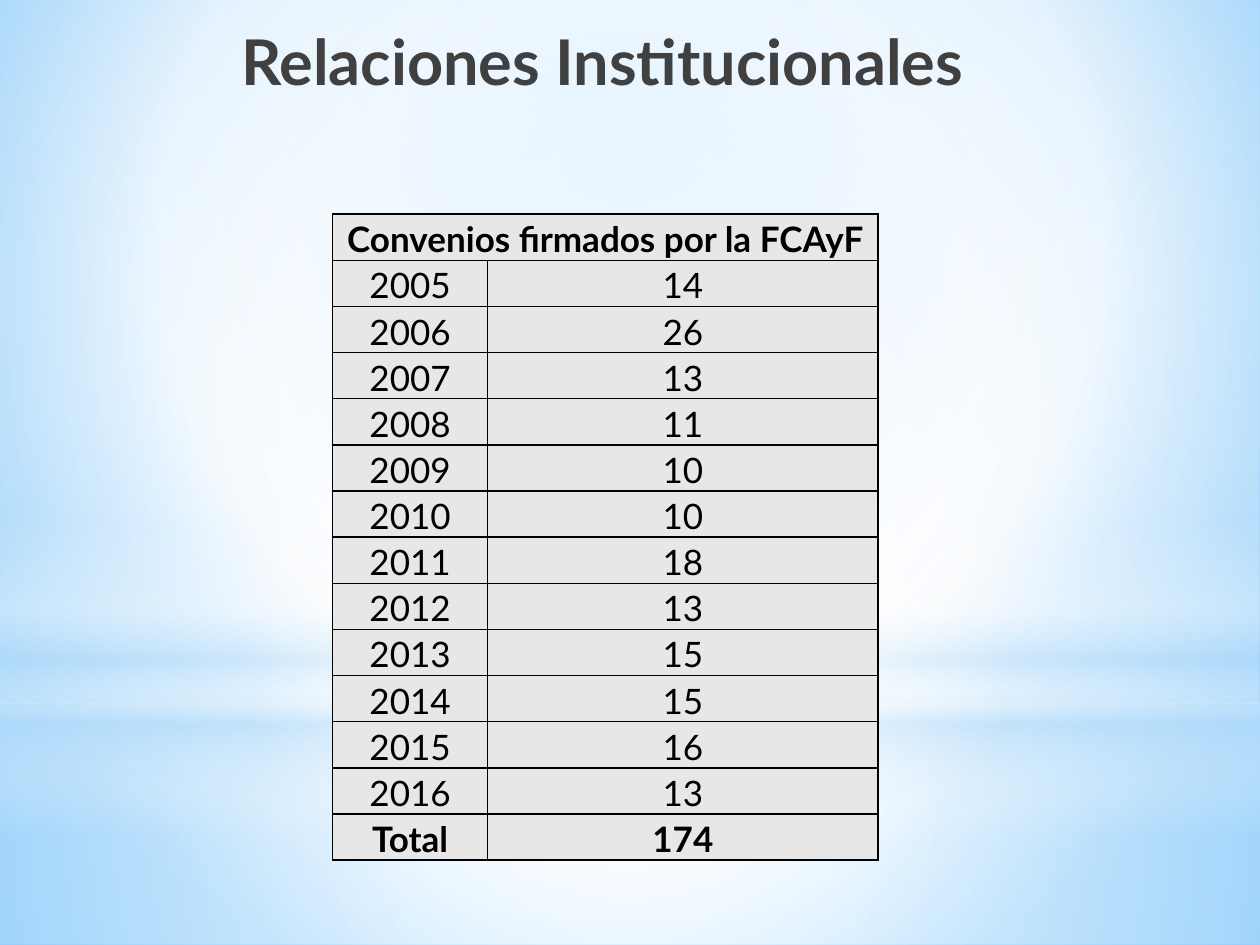
from lxml.etree import SubElement
from pptx import Presentation
from pptx.dml.color import RGBColor
from pptx.enum.shapes import MSO_SHAPE
from pptx.enum.text import MSO_ANCHOR, PP_ALIGN
from pptx.oxml.ns import qn
from pptx.util import Inches, Pt

FONT = "Lato"
COLORS = {
    "white": "FFFFFF",
    "pale": "B4DCFA",
    "sky": "9ED5FF",
    "deep": "5BB9FF",
    "title": "404040",
    "ink": "000000",
    "cell": "E7E7E7",
}
CENTER = (50, 50, 50, 50)
YEARS = {
    2005: 14, 2006: 26, 2007: 13, 2008: 11, 2009: 10, 2010: 10,
    2011: 18, 2012: 13, 2013: 15, 2014: 15, 2015: 16, 2016: 13,
}


def rgb(name):
    return RGBColor.from_string(COLORS[name])


def blend(fill, root, stops, focus=None):
    fill.gradient()
    grad = next(root.iter(qn("a:gradFill")))
    for child in list(grad):
        grad.remove(child)
    group = SubElement(grad, qn("a:gsLst"))
    for pos, name, alpha in stops:
        stop = SubElement(group, qn("a:gs"), pos=str(pos * 1000))
        color = SubElement(stop, qn("a:srgbClr"), val=COLORS[name])
        if alpha < 100:
            SubElement(color, qn("a:alpha"), val=str(alpha * 1000))
    if focus:
        way = SubElement(grad, qn("a:path"), {"path": "circle"})
        sides = {side: str(part * 1000) for side, part in zip("ltrb", focus)}
        SubElement(way, qn("a:fillToRect"), sides)
    else:
        SubElement(grad, qn("a:lin"), ang="5400000", scaled="0")


def add_glow(slide, kind, box, stops, focus=None):
    shape = slide.shapes.add_shape(kind, *map(Inches, box))
    shape.shadow.inherit = False
    shape.line.fill.background()
    blend(shape.fill, shape.element, stops, focus)


def add_backdrop(slide, box):
    left, top, width, height = box
    blend(slide.background.fill, slide.element,
          [(0, "sky", 100), (60, "white", 100), (100, "deep", 100)],
          (20, 10, 20, 60))
    split = 5.58
    rect = MSO_SHAPE.RECTANGLE
    add_glow(slide, rect, (left, top + split, width, height - split),
             [(0, "white", 91), (37, "white", 76), (100, "pale", 79)], CENTER)
    add_glow(slide, rect, (left, top, width, split),
             [(0, "white", 89), (48, "white", 62), (100, "pale", 79)], CENTER)
    add_glow(slide, rect, (left, top + 4.12, width, 2.5),
             [(0, "white", 0), (29, "white", 30), (45, "pale", 40),
              (55, "white", 26), (65, "pale", 60), (100, "white", 0)])
    add_glow(slide, MSO_SHAPE.OVAL, (left, top + 1.75, width, split),
             [(0, "white", 100), (56, "white", 0)], CENTER)


def write(frame, text, size, color, bold):
    para = frame.paragraphs[0]
    para.alignment = PP_ALIGN.CENTER
    run = para.add_run()
    run.text = text
    run.font.name = FONT
    run.font.size = Pt(size)
    run.font.bold = bold
    run.font.color.rgb = rgb(color)


def add_title(slide, box):
    frame = slide.shapes.add_textbox(*map(Inches, box)).text_frame
    frame.word_wrap = True
    frame.vertical_anchor = MSO_ANCHOR.TOP
    write(frame, "Relaciones Institucionales", 36, "title", True)


def style_cell(cell):
    cell.margin_left = cell.margin_right = cell.margin_top = Inches(0.01)
    cell.margin_bottom = 0
    cell.vertical_anchor = MSO_ANCHOR.BOTTOM
    props = cell._tc.get_or_add_tcPr()
    for side in ("lnL", "lnR", "lnT", "lnB"):
        line = SubElement(props, qn(f"a:{side}"), w=str(Pt(1)))
        fill = SubElement(line, qn("a:solidFill"))
        SubElement(fill, qn("a:srgbClr"), val=COLORS["ink"])
    cell.fill.solid()
    cell.fill.fore_color.rgb = rgb("cell")


def add_deals(slide, box):
    total = sum(YEARS.values())
    rows = [("Convenios firmados por la FCAyF",), *YEARS.items(),
            ("Total", total)]
    table = slide.shapes.add_table(len(rows), 2, *map(Inches, box)).table
    first = 1.23
    table.columns[0].width = Inches(first)
    table.columns[1].width = Inches(box[2] - first)
    table.cell(0, 0).merge(table.cell(0, 1))
    for i, row in enumerate(rows):
        table.rows[i].height = Inches(box[3] / len(rows))
        for cell in table.rows[i].cells:
            style_cell(cell)
        for j, value in enumerate(row):
            bold = i in (0, len(rows) - 1)
            write(table.cell(i, j).text_frame, str(value), 20, "ink", bold)


def main():
    deck = Presentation()
    deck.slide_width = Inches(10)
    deck.slide_height = Inches(7.5)
    slide = deck.slides.add_slide(deck.slide_layouts[6])
    add_backdrop(slide, (0, 0, 10, 7.5))
    add_title(slide, (1.22, 0.13, 7.12, 1.25))
    add_deals(slide, (2.64, 1.7, 4.33, 5.13))
    deck.save("out.pptx")


if __name__ == "__main__":
    main()
